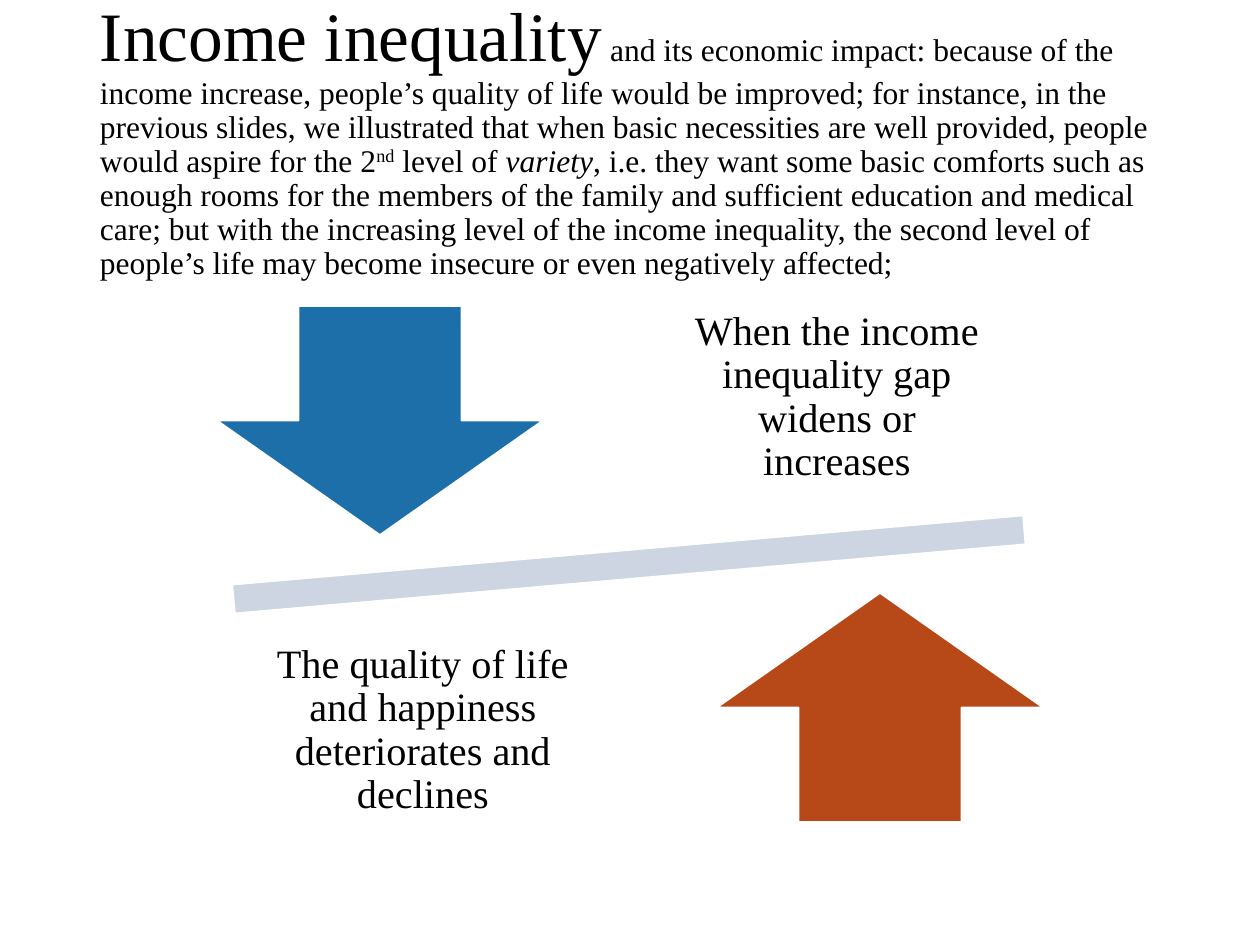
from pptx import Presentation
from pptx.dml.color import RGBColor
from pptx.enum.shapes import MSO_SHAPE as Shape
from pptx.enum.text import MSO_ANCHOR as Anchor, PP_ALIGN as Align
from pptx.util import Emu, Pt

PX_PER_INCH = 126


def px(length):
    return Emu(round(length * 914400 / PX_PER_INCH))


def color(hex_string):
    return RGBColor.from_string(hex_string)


class SlideBuilder:
    font_name = "Times New Roman"
    text_color = "000000"
    outline_color = "FFFFFF"
    line_spacing = 0.9

    def __init__(self, slide):
        self.slide = slide

    def figure(self, kind, box, fill, rotation=0):
        shape = self.slide.shapes.add_shape(kind, *map(px, box))
        shape.shadow.inherit = False
        shape.rotation = rotation
        shape.fill.solid()
        shape.fill.fore_color.rgb = color(fill)
        shape.line.color.rgb = color(self.outline_color)
        shape.line.width = Pt(1)

    def text(self, box, runs, align=Align.LEFT, insets=(13, 6)):
        """Add one paragraph; each run is (wording, size, style)."""
        frame = self.slide.shapes.add_textbox(*map(px, box)).text_frame
        frame.word_wrap = True
        frame.vertical_anchor = Anchor.MIDDLE
        frame.margin_left = frame.margin_right = px(insets[0])
        frame.margin_top = frame.margin_bottom = px(insets[1])
        paragraph = frame.paragraphs[0]
        paragraph.alignment = align
        paragraph.line_spacing = self.line_spacing
        for wording, size, style in runs:
            run = paragraph.add_run()
            run.text = wording
            run.font.name = self.font_name
            run.font.size = Pt(size)
            run.font.color.rgb = color(self.text_color)
            if style == "italic":
                run.font.italic = True
            elif style == "superscript":
                run._r.get_or_add_rPr().set("baseline", "30000")

    def label(self, left, top, wording):
        self.text((left, top, 348, 241), [(wording, 23, None)],
                  Align.CENTER, insets=(23, 23))


def main():
    deck = Presentation()
    deck.slide_width, deck.slide_height = px(1260), px(945)
    builder = SlideBuilder(deck.slides.add_slide(deck.slide_layouts[6]))

    builder.text((87, 50, 1086, 183), [
        ("Income inequality", 39.6, None),
        (" and its economic impact: because of the income increase, people’s "
         "quality of life would be improved; for instance, in the previous "
         "slides, we illustrated that when basic necessities are well "
         "provided, people would aspire for the 2", 18, None),
        ("nd", 18, "superscript"),
        (" level of ", 18, None),
        ("variety", 18, "italic"),
        (", i.e. they want some basic comforts such as enough rooms for the "
         "members of the family and sufficient education and medical care; "
         "but with the increasing level of the income inequality, the second "
         "level of people’s life may become insecure or even negatively "
         "affected;", 18, None),
    ])

    builder.figure(Shape.MATH_MINUS, (89, 503, 1080, 123), "CDD5E2", rotation=355)
    builder.figure(Shape.DOWN_ARROW, (217, 306, 326, 229), "1D6FA9")
    builder.label(663, 277, "When the income inequality gap widens or increases")
    builder.figure(Shape.UP_ARROW, (717, 593, 326, 229), "B74919")
    builder.label(249, 610, "The quality of life and happiness deteriorates and declines")

    deck.save("out.pptx")


if __name__ == "__main__":
    main()
